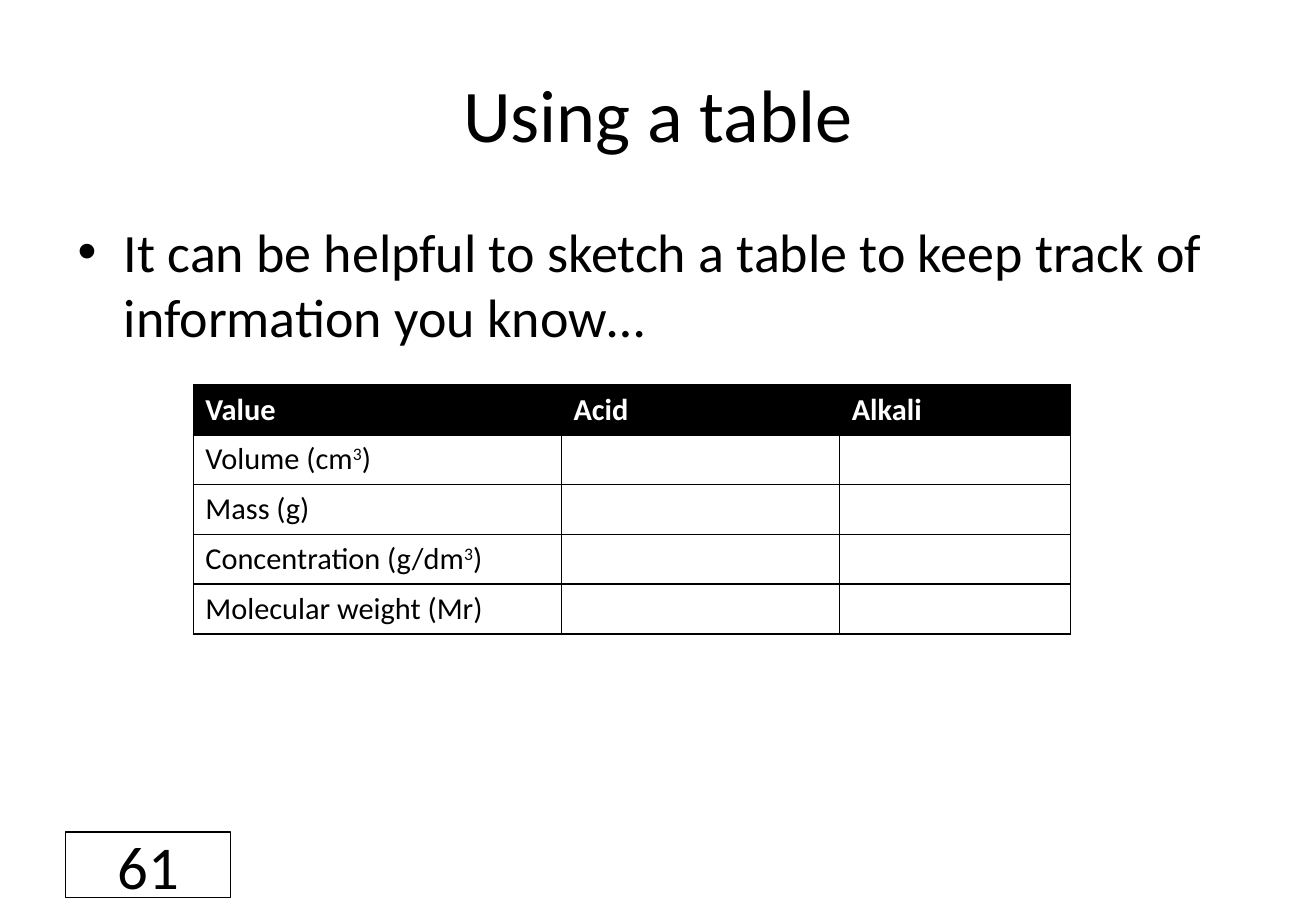
from lxml.etree import SubElement
from pptx import Presentation
from pptx.dml.color import RGBColor
from pptx.enum.shapes import MSO_SHAPE
from pptx.enum.text import MSO_ANCHOR as ANCHOR, PP_ALIGN as ALIGN
from pptx.oxml.ns import qn
from pptx.util import Inches, Pt

BLACK, WHITE = "000000", "FFFFFF"
TITLE_ONLY = 5
HEADER = ["Value", "Acid", "Alkali"]
QUANTITIES = [
    ["Volume (cm", "3", ")"],
    ["Mass (g)"],
    ["Concentration (g/dm", "3", ")"],
    ["Molecular weight (Mr)"],
]


def color(hex_value):
    return RGBColor.from_string(hex_value)


def box(left, top, width, height):
    return [Inches(value) for value in (left, top, width, height)]


def write(paragraph, text, size, ink=BLACK, bold=False, align=ALIGN.LEFT, raised=False):
    paragraph.alignment = align
    run = paragraph.add_run()
    run.text = text
    font = run.font
    font.name, font.size, font.bold = "Calibri", Pt(size), bold
    font.color.rgb = color(ink)
    if raised:
        run._r.get_or_add_rPr().set("baseline", "30000")


class SlideBuilder:
    """Adds the slide's elements in one shared style."""

    def __init__(self, presentation):
        self.slide = presentation.slides.add_slide(presentation.slide_layouts[TITLE_ONLY])

    def title(self, text, place):
        shape = self.slide.shapes.title
        shape.left, shape.top, shape.width, shape.height = box(*place)
        shape.text_frame.vertical_anchor = ANCHOR.MIDDLE
        write(shape.text_frame.paragraphs[0], text, 44, align=ALIGN.CENTER)

    def bullet(self, text, place):
        frame = self.slide.shapes.add_textbox(*box(*place)).text_frame
        frame.word_wrap = True
        paragraph = frame.paragraphs[0]
        properties = paragraph._p.get_or_add_pPr()
        indent = Inches(0.38)
        properties.set("marL", str(indent))
        properties.set("indent", str(-indent))
        SubElement(properties, qn("a:buFont"), typeface="Arial")
        SubElement(properties, qn("a:buChar"), char="•")
        write(paragraph, text, 32)

    def table(self, place, widths, row_height):
        rows = len(QUANTITIES) + 1
        table = self.slide.shapes.add_table(rows, len(widths), *box(*place)).table
        table.horz_banding = False
        for column, width in zip(table.columns, widths):
            column.width = Inches(width)
        for row in table.rows:
            row.height = Inches(row_height)
            for cell in row.cells:
                self.cell_style(cell, WHITE)
        for cell, text in zip(table.rows[0].cells, HEADER):
            self.cell_style(cell, BLACK)
            write(cell.text_frame.paragraphs[0], text, 18, ink=WHITE, bold=True)
        for number, parts in enumerate(QUANTITIES, start=1):
            paragraph = table.cell(number, 0).text_frame.paragraphs[0]
            for part in parts:
                write(paragraph, part, 18, raised=part == "3")

    def cell_style(self, cell, fill):
        properties = cell._tc.get_or_add_tcPr()
        if len(properties) == 0:
            for side in ("lnL", "lnR", "lnT", "lnB"):
                line = SubElement(properties, qn(f"a:{side}"), w=str(Pt(1)))
                solid = SubElement(line, qn("a:solidFill"))
                SubElement(solid, qn("a:srgbClr"), val=BLACK)
        cell.fill.solid()
        cell.fill.fore_color.rgb = color(fill)

    def page_number(self, text, place):
        shape = self.slide.shapes.add_shape(MSO_SHAPE.RECTANGLE, *box(*place))
        shape.shadow.inherit = False
        shape.fill.background()
        shape.line.color.rgb = color(BLACK)
        shape.line.width = Pt(0.75)
        shape.text_frame.vertical_anchor = ANCHOR.MIDDLE
        write(shape.text_frame.paragraphs[0], text, 36, align=ALIGN.CENTER)


def main():
    presentation = Presentation()
    presentation.slide_width, presentation.slide_height = Inches(10.83), Inches(7.5)
    builder = SlideBuilder(presentation)
    builder.title("Using a table", (0.54, 0.3, 9.75, 1.25))
    builder.bullet(
        "It can be helpful to sketch a table to keep track of information you know…",
        (0.54, 1.75, 9.75, 4.95),
    )
    builder.table((1.59, 3.17, 7.22, 2.03), (3.03, 2.29, 1.9), 0.41)
    builder.page_number("61", (0.54, 6.85, 1.36, 0.54))
    presentation.save("out.pptx")


if __name__ == "__main__":
    main()
